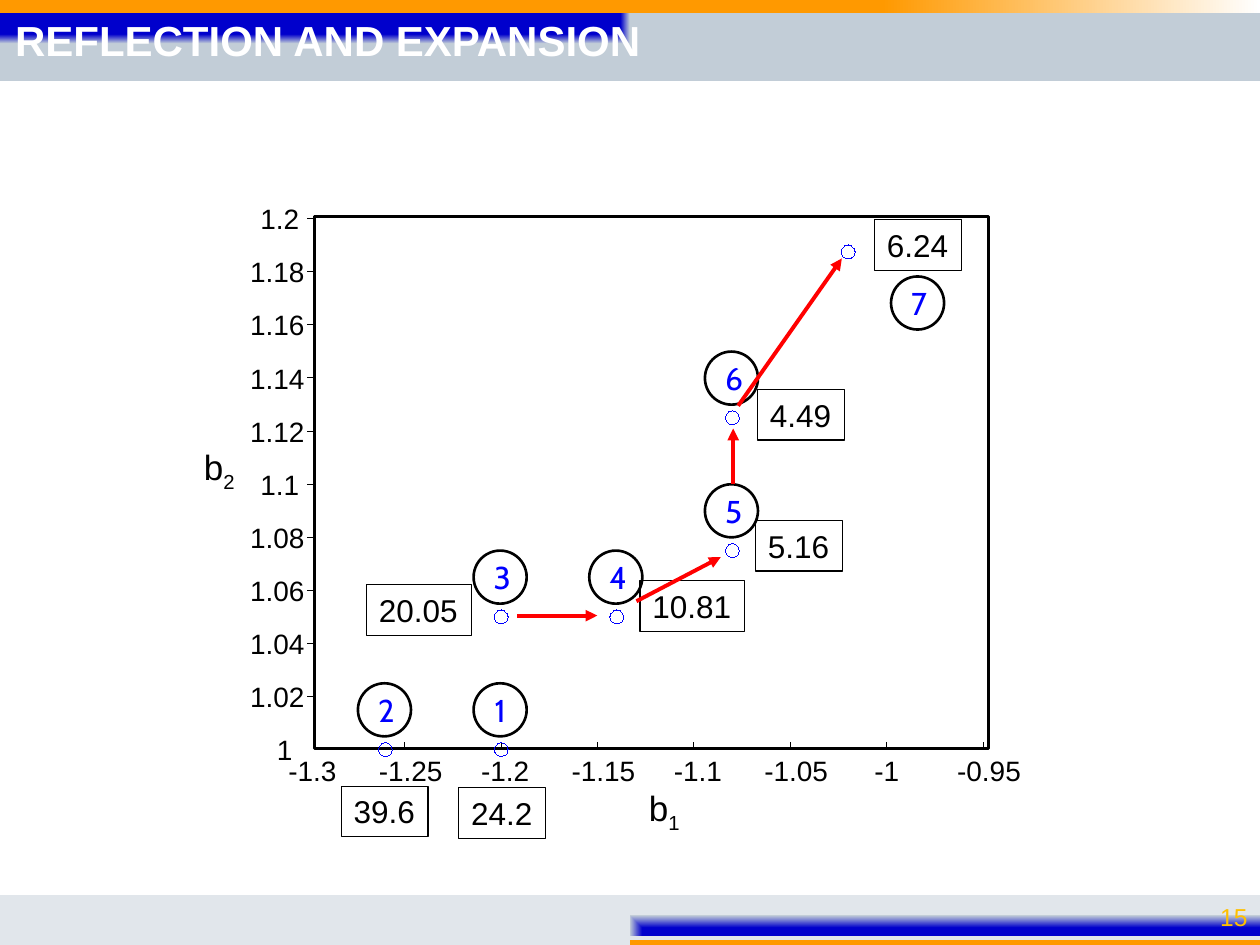
from lxml import etree
from pptx import Presentation
from pptx.dml.color import RGBColor
from pptx.enum.shapes import MSO_CONNECTOR, MSO_SHAPE
from pptx.enum.text import MSO_ANCHOR, MSO_AUTO_SIZE, PP_ALIGN
from pptx.oxml import parse_xml
from pptx.oxml.ns import nsdecls, qn
from pptx.util import Cm, Pt

RECTANGLE, OVAL = MSO_SHAPE.RECTANGLE, MSO_SHAPE.OVAL
STRAIGHT = MSO_CONNECTOR.STRAIGHT
MIDDLE, TOP = MSO_ANCHOR.MIDDLE, MSO_ANCHOR.TOP
LEFT, CENTER, RIGHT = PP_ALIGN.LEFT, PP_ALIGN.CENTER, PP_ALIGN.RIGHT
FIT_SHAPE, NO_FIT = MSO_AUTO_SIZE.SHAPE_TO_FIT_TEXT, MSO_AUTO_SIZE.NONE
HAIRLINE = 0.01

COLORS = {
    "navy": "0000CC", "steel": "C2CDD7", "orange": "FF9900", "white": "FFFFFF",
    "mist": "E1E6EB", "gold": "FFC000", "black": "000000", "blue": "0000FF",
    "red": "FF0000",
}
FORMATS = {
    "title": {"size": Pt(24), "name": "Arial", "bold": True},
    "page": {"size": Pt(14), "name": "Arial"},
    "tick": {"size": Pt(16), "name": "Arial"},
    "axis": {"size": Pt(20), "name": "Arial"},
    "value": {"size": Pt(18), "name": "Arial"},
    "number": {"size": Pt(18), "name": "Cabin"},
}
LINEAR = '<a:lin ang="0" scaled="1"/>'
FROM_TOP_LEFT = '<a:path path="rect"><a:fillToRect r="100000" b="100000"/></a:path>'
FROM_BOTTOM_RIGHT = '<a:path path="rect"><a:fillToRect l="100000" t="100000"/></a:path>'
BANDS = [
    (0.13, 1.5, FROM_TOP_LEFT, [(25, "navy"), (75, "navy"), (100, "steel")]),
    (0, 0.26, LINEAR,
     [(46, "orange"), (70, "orange"), (100, "white"), (100, "mist")]),
    (18.85, 0.2, FROM_BOTTOM_RIGHT,
     [(50, "orange"), (93, "orange"), (100, "white"), (100, "mist")]),
    (18.04, 0.83, FROM_BOTTOM_RIGHT,
     [(40, "navy"), (100, "steel"), (100, "mist")]),
]
SIMPLEX_POINTS = [
    (-1.2, 1, "24.2", (9.25, 15.88)),
    (-1.26, 1, "39.6", (6.88, 15.85)),
    (-1.2, 1.05, "20.05", (7.39, 11.79)),
    (-1.14, 1.05, "10.81", (12.9, 11.71)),
    (-1.08, 1.075, "5.16", (15.23, 10.49)),
    (-1.08, 1.125, "4.49", (15.27, 7.85)),
    (-1.02, 1.1875, "6.24", (17.63, 4.43)),
]
NUMBER_OFFSET, LAST_NUMBER_OFFSET = (-0.02, -0.8), (1.4, 1.03)
MOVES = [
    (10.43, 12.41, 12.04, 12.41),
    (12.83, 12.12, 14.53, 11.23),
    (14.78, 9.75, 14.78, 8.64),
    (14.88, 8.18, 16.97, 5.21),
]


def rgb(color):
    """Return the named colour."""
    return RGBColor.from_string(COLORS[color])


def x_position(b1):
    """Return the horizontal place of a b1 value in centimetres."""
    return 8.16 + (b1 + 1.25) * 38.86


def y_position(b2):
    """Return the vertical place of a b2 value in centimetres."""
    return 15.11 - (b2 - 1) * 53.5


def format_font(font, style, color):
    """Apply a named text format and colour."""
    for attribute, value in FORMATS[style].items():
        setattr(font, attribute, value)
    font.color.rgb = rgb(color)


def write_text(shape, text, style, color="black", align=LEFT, anchor=TOP,
               wrap=False, inset=None):
    """Write one formatted paragraph into a shape."""
    frame = shape.text_frame
    settings = {"word_wrap": wrap, "vertical_anchor": anchor,
                "auto_size": NO_FIT if wrap else FIT_SHAPE}
    if inset is not None:
        for side in ("left", "top", "right", "bottom"):
            settings["margin_" + side] = Cm(inset)
    for attribute, value in settings.items():
        setattr(frame, attribute, value)
    paragraph = frame.paragraphs[0]
    paragraph.alignment = align
    run = paragraph.add_run()
    run.text = text
    format_font(run.font, style, color)
    return paragraph


def add_text(slide, box, text, style, **options):
    """Add a text box and return its paragraph."""
    shape = slide.shapes.add_textbox(*map(Cm, box))
    return write_text(shape, text, style, **options)


def add_outline(slide, kind, box, width, color="black"):
    """Add an unfilled outlined shape."""
    shape = slide.shapes.add_shape(kind, *map(Cm, box))
    shape.shadow.inherit = False
    shape.fill.background()
    shape.line.color.rgb = rgb(color)
    shape.line.width = Pt(width)
    return shape


def add_circle(slide, center_x, center_y, diameter, width, color):
    """Add an outlined circle around a centre."""
    box = (center_x - diameter / 2, center_y - diameter / 2, diameter, diameter)
    return add_outline(slide, OVAL, box, width, color)


def add_line(slide, ends, width=HAIRLINE, color="black", arrow=False):
    """Add a straight line, with an arrowhead if wanted."""
    line = slide.shapes.add_connector(STRAIGHT, *map(Cm, ends))
    line.line.color.rgb = rgb(color)
    line.line.width = Pt(width)
    if arrow:
        outline = line.line._get_or_add_ln()
        etree.SubElement(outline, qn("a:tailEnd"), type="triangle")
    etree.SubElement(line._element.spPr, qn("a:effectLst"))


def add_band(slide, top, height, direction, stops):
    """Add a full-width gradient band."""
    band = slide.shapes.add_shape(RECTANGLE, 0, Cm(top), Cm(25.4), Cm(height))
    band.shadow.inherit = False
    band.line.fill.background()
    stop_xml = "".join(
        f'<a:gs pos="{position * 1000}"><a:srgbClr val="{COLORS[color]}"/></a:gs>'
        for position, color in stops)
    gradient = parse_xml(f'<a:gradFill {nsdecls("a")} rotWithShape="1">'
                         f'<a:gsLst>{stop_xml}</a:gsLst>{direction}</a:gradFill>')
    band._element.spPr.find(qn("a:prstGeom")).addnext(gradient)


def add_title(slide, text):
    """Place the title placeholder over the bands."""
    title = slide.shapes.title
    slide.shapes._spTree.append(title._element)
    for attribute, value in zip(("left", "top", "width", "height"),
                                (0.05, 0.28, 25.35, 1.17)):
        setattr(title, attribute, Cm(value))
    paragraph = write_text(title, text, "title", "white", anchor=MIDDLE, wrap=True)
    paragraph.line_spacing = 0.9


def add_tick_label(slide, center_x, center_y, text):
    """Add a tick label around a centre."""
    width = 0.32 * len(text)
    add_text(slide, (center_x - width / 2, center_y - 0.34, width, 0.69), text,
             "tick", align=CENTER, inset=0)


def add_axes(slide):
    """Draw the plot frame, ticks, tick labels and axis names."""
    add_outline(slide, RECTANGLE, (6.34, 4.37, 13.59, 10.72), 1.5)
    for step in range(8):
        b1 = -1.3 + 0.05 * step
        x, text = x_position(b1), f"{b1:.2f}".rstrip("0").rstrip(".")
        if step:
            add_line(slide, (x, 15.11, x, 14.96))
        add_tick_label(slide, x + 0.04 * (len(text) - 2), 15.54, text)
    for step in range(11):
        b2 = 1 + 0.02 * step
        y, text = y_position(b2), f"{b2:.2f}".rstrip("0").rstrip(".")
        if step:
            add_line(slide, (6.2, y, 6.32, y))
        add_tick_label(slide, 5.74 - 0.05 * (len(text) - 1), y, text)
    for left, top, index in ((12.83, 15.73, "1"), (3.86, 8.86, "2")):
        paragraph = add_text(slide, (left, top, 1.17, 1.12), "b", "axis")
        subscript = paragraph.add_run()
        subscript.text = index
        format_font(subscript.font, "axis", "black")
        subscript.font._element.set("baseline", "-25000")


def add_points(slide):
    """Draw each simplex point with its number and value."""
    for number, (b1, b2, value, corner) in enumerate(SIMPLEX_POINTS, 1):
        x, y = x_position(b1), y_position(b2)
        add_circle(slide, x, y, 0.28, HAIRLINE, "blue")
        last = number == len(SIMPLEX_POINTS)
        shift_x, shift_y = LAST_NUMBER_OFFSET if last else NUMBER_OFFSET
        circle = add_circle(slide, x + shift_x, y + shift_y, 1.07, 1.5, "black")
        write_text(circle, str(number), "number", "blue", CENTER, MIDDLE, wrap=True)
        width = 2.11 if len(value) == 5 else 1.75
        box = add_outline(slide, RECTANGLE, (*corner, width, 1.02), 0.75)
        write_text(box, value, "value")


def main():
    """Build and save the slide."""
    presentation = Presentation()
    presentation.slide_width, presentation.slide_height = Cm(25.4), Cm(19.05)
    slide = presentation.slides.add_slide(presentation.slide_layouts[5])
    for band in BANDS:
        add_band(slide, *band)
    add_text(slide, (23.47, 18.11, 1.93, 0.74), "15", "page", color="gold",
             align=RIGHT, anchor=MIDDLE, wrap=True)
    add_title(slide, "REFLECTION AND EXPANSION")
    add_axes(slide)
    add_points(slide)
    for ends in MOVES:
        add_line(slide, ends, 2.25, "red", arrow=True)
    presentation.save("out.pptx")


if __name__ == "__main__":
    main()
